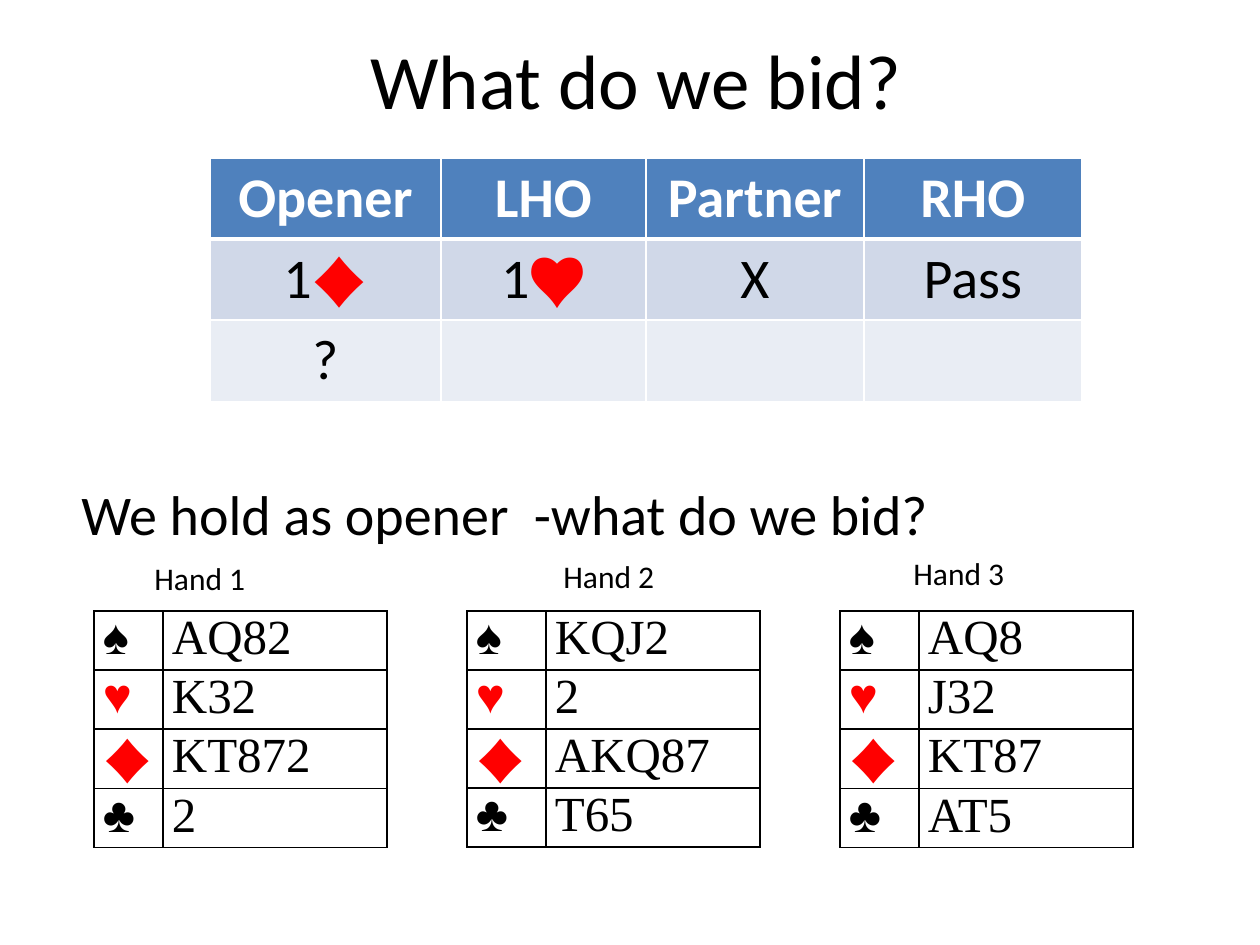
from lxml import etree
from pptx import Presentation
from pptx.dml.color import RGBColor
from pptx.enum.text import MSO_ANCHOR, PP_ALIGN
from pptx.oxml.ns import qn
from pptx.util import Pt

PX = 914400 // 126
CENTER, MIDDLE = PP_ALIGN.CENTER, MSO_ANCHOR.MIDDLE
BLACK = RGBColor(0x00, 0x00, 0x00)
WHITE = RGBColor(0xFF, 0xFF, 0xFF)
RED = RGBColor(0xFF, 0x00, 0x00)
BLUE = RGBColor(0x4F, 0x81, 0xBD)
PALE = RGBColor(0xD0, 0xD8, 0xE8)
LIGHT = RGBColor(0xE9, 0xED, 0xF4)
SANS, SERIF = "Calibri", "Times New Roman"


def style(font, size, color, name=SANS, bold=False):
    font.size, font.name, font.bold = Pt(size), name, bold
    font.color.rgb = color


def border(cell, color, widths):
    props = cell._tc.get_or_add_tcPr()
    for i, (side, width) in enumerate(zip("LRTB", widths)):
        line = etree.Element(qn(f"a:ln{side}"), w=str(Pt(width)))
        fill = etree.SubElement(line, qn("a:solidFill"))
        etree.SubElement(fill, qn("a:srgbClr"), val=str(color))
        props.insert(i, line)


deck = Presentation()
deck.slide_width, deck.slide_height = 1260 * PX, 945 * PX
slide = deck.slides.add_slide(deck.slide_layouts[5])
shapes = slide.shapes

# Title
title = shapes.title
title.left, title.top, title.width, title.height = 69 * PX, 0, 1134 * PX, 158 * PX
title.text_frame.text = "What do we bid?"
title.text_frame.vertical_anchor = MIDDLE
para = title.text_frame.paragraphs[0]
para.alignment = CENTER
style(para.font, 44, BLACK)

# Auction table
calls = [
    ["Opener", "LHO", "Partner", "RHO"],
    ["1♦", "1♥", "X", "Pass"],
    ["?", "", "", ""],
]
wide = [231, 205, 218, 218]
table = shapes.add_table(3, 4, 210 * PX, 158 * PX, sum(wide) * PX, 242 * PX).table
for col, width in zip(table.columns, wide):
    col.width = width * PX
for r, (row, fill) in enumerate(zip(calls, [BLUE, PALE, LIGHT])):
    table.rows[r].height = 81 * PX
    head = r == 0
    for c, call in enumerate(row):
        cell = table.cell(r, c)
        cell.fill.solid()
        cell.fill.fore_color.rgb = fill
        border(cell, WHITE, [1, 1, 3 if r == 1 else 1, 3 if head else 1])
        para = cell.text_frame.paragraphs[0]
        para.alignment = CENTER
        style(para.font, 32, WHITE if head else BLACK, bold=head)
        # Suit symbols are red, the rest takes the cell colour
        for part in [call] if head else call:
            run = para.add_run()
            run.text = part
            color = WHITE if head else RED if part in "♦♥" else BLACK
            style(run.font, 32, color, bold=head)

# Question and hand labels
labels = [
    ("We hold as opener  -what do we bid?", 69, 473, 925, 81, 32),
    ("Hand 1", 142, 553, 126, 50, 18),
    ("Hand 2", 551, 551, 126, 50, 18),
    ("Hand 3", 901, 548, 117, 50, 18),
]
for text, x, y, w, h, size in labels:
    frame = shapes.add_textbox(x * PX, y * PX, w * PX, h * PX).text_frame
    frame.word_wrap = True
    frame.text = text
    style(frame.paragraphs[0].font, size, BLACK)

# Hands, one table each
low = [54, 57, 60, 57]
hands = [
    (69, low, ["AQ82", "K32", "KT872", "2"]),
    (79, [59] * 4, ["KQJ2", "2", "AKQ87", "T65"]),
    (79, low, ["AQ8", "J32", "KT87", "AT5"]),
]
for i, (first, tall, cards) in enumerate(hands):
    left = 94 + 373 * i
    table = shapes.add_table(4, 2, left * PX, 611 * PX, 293 * PX, sum(tall) * PX).table
    table.first_row = table.horz_banding = False
    table.columns[0].width = first * PX
    table.columns[1].width = (293 - first) * PX
    for r, pair in enumerate(zip("♠♥♦♣", cards)):
        table.rows[r].height = tall[r] * PX
        for c, text in enumerate(pair):
            cell = table.cell(r, c)
            cell.fill.background()
            cell.margin_left = cell.margin_right = 9 * PX
            cell.margin_top = cell.margin_bottom = 0
            border(cell, BLACK, [1] * 4)
            cell.text_frame.text = text
            style(cell.text_frame.paragraphs[0].font, 28,
                  RED if text in "♥♦" else BLACK,
                  SANS if text == "♦" else SERIF)

deck.save("out.pptx")
